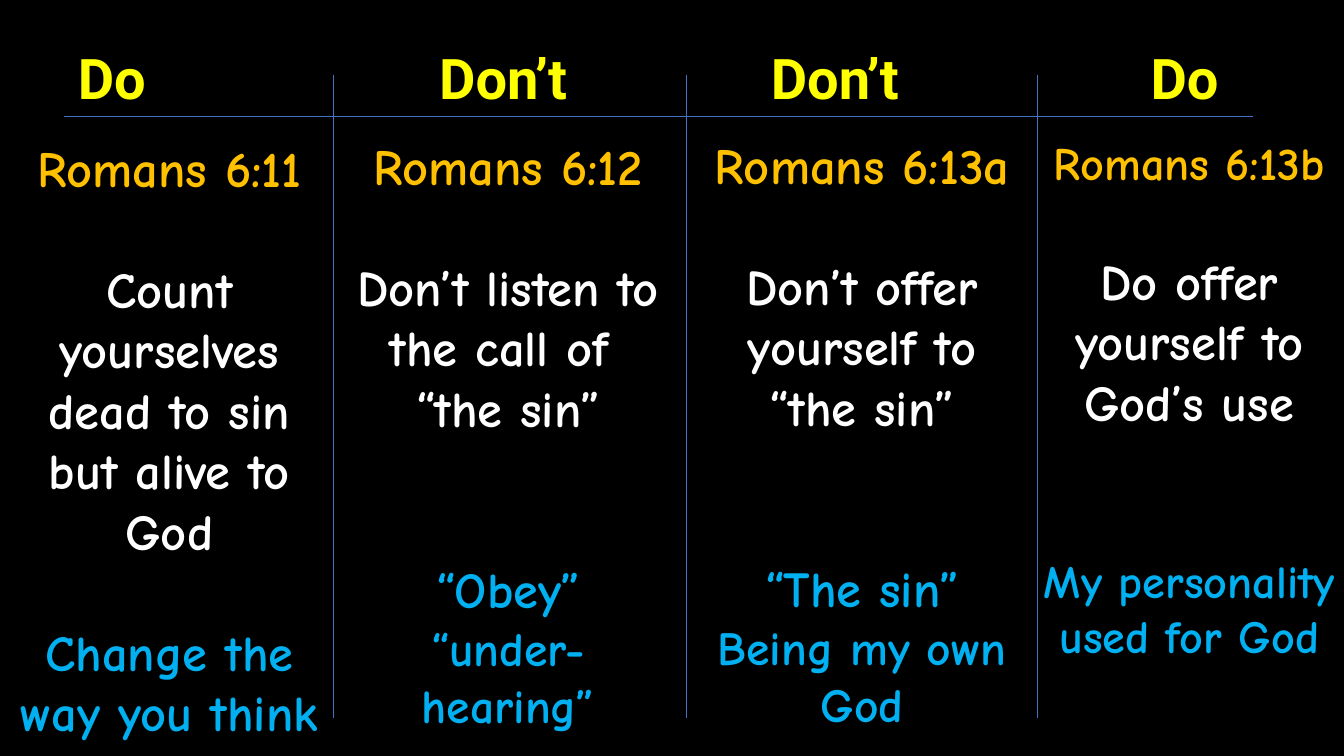
from pptx import Presentation
from pptx.dml.color import RGBColor
from pptx.enum.shapes import MSO_CONNECTOR
from pptx.enum.text import MSO_ANCHOR, PP_ALIGN
from pptx.util import Inches, Pt
from lxml import etree

CENTER = PP_ALIGN.CENTER
TOP = MSO_ANCHOR.TOP
STRAIGHT = MSO_CONNECTOR.STRAIGHT
DRAWING = "http://schemas.openxmlformats.org/drawingml/2006/main"

THEME = {
    "back": "000000", "head": "FFFF00", "verse": "FFC000",
    "point": "FFFFFF", "note": "00B0F0", "rule": "4472C4",
    "head_font": "Roboto", "body_font": "Comic Neue",
    "head_size": 40, "size": 36, "small": 34, "tight": 33,
    "rule_width": 0.5, "line": 43.2,
}

# Each text line: words, colour key, size key, blank lines above
COLUMNS = [
    {"head": "Do", "mid": 1.11, "box": (0.05, 1.31, 3.26, 6.16), "lines": [
        ("Romans 6:11", "verse", "size", 0),
        ("Count yourselves dead to sin but alive to God", "point", "size", 1),
        ("Change the way you think", "note", "size", 1)]},
    {"head": "Don’t", "mid": 4.99, "box": (3.41, 1.29, 3.26, 6.09), "lines": [
        ("Romans 6:12", "verse", "size", 0),
        ("Don’t listen to the call of ", "point", "size", 1),
        ("“the sin”", "point", "size", 0),
        ("“Obey”", "note", "size", 2),
        ("“under-hearing”", "note", "small", 0)]},
    {"head": "Don’t", "mid": 8.28, "box": (6.89, 1.28, 3.32, 6.09), "lines": [
        ("Romans 6:13a", "verse", "size", 0),
        ("Don’t offer yourself to “the sin”", "point", "size", 1),
        ("“The sin”", "note", "size", 2),
        ("Being my own God", "note", "small", 0)]},
    {"head": "Do", "mid": 11.75, "box": (10.25, 1.28, 3.09, 5.96), "lines": [
        ("Romans 6:13b", "verse", "tight", 0),
        ("Do offer yourself to God’s use", "point", "size", 1),
        ("My personality used for God", "note", "tight", 2)]},
]
HEAD_TOP, HEAD_WIDE, HEAD_HIGH = 0.38, 2, 0.77
RULES = [(x, 0.74, x, 7.12) for x in (3.31, 6.81, 10.29)]
RULES.append((0.63, 1.15, 12.43, 1.15))


def color(key):
    return RGBColor.from_string(THEME[key])


def add_text(slide, box, lines, face):
    """Add a centred text box with one paragraph per line."""
    frame = slide.shapes.add_textbox(*map(Inches, box)).text_frame
    frame.word_wrap = True
    frame.vertical_anchor = TOP
    frame.text = "\n".join(line[0] for line in lines)
    for para, (_, tint, size, gap) in zip(frame.paragraphs, lines):
        para.alignment = CENTER
        para.space_before = Pt(gap * THEME["line"])
        font = para.runs[0].font
        font.name = THEME[face]
        font.size = Pt(THEME[size])
        font.bold = True
        font.color.rgb = color(tint)


def add_rule(slide, ends):
    rule = slide.shapes.add_connector(STRAIGHT, *map(Inches, ends))
    rule.line.color.rgb = color("rule")
    rule.line.width = Pt(THEME["rule_width"])
    etree.SubElement(rule._element.spPr, f"{{{DRAWING}}}effectLst")


def main():
    deck = Presentation()
    deck.slide_width = Inches(13.33)
    deck.slide_height = Inches(7.5)
    slide = deck.slides.add_slide(deck.slide_layouts[6])
    slide.background.fill.solid()
    slide.background.fill.fore_color.rgb = color("back")
    for ends in RULES:
        add_rule(slide, ends)
    for col in COLUMNS:
        left = col["mid"] - HEAD_WIDE / 2
        add_text(slide, (left, HEAD_TOP, HEAD_WIDE, HEAD_HIGH),
                 [(col["head"], "head", "head_size", 0)], "head_font")
        add_text(slide, col["box"], col["lines"], "body_font")
    deck.save("out.pptx")


if __name__ == "__main__":
    main()
